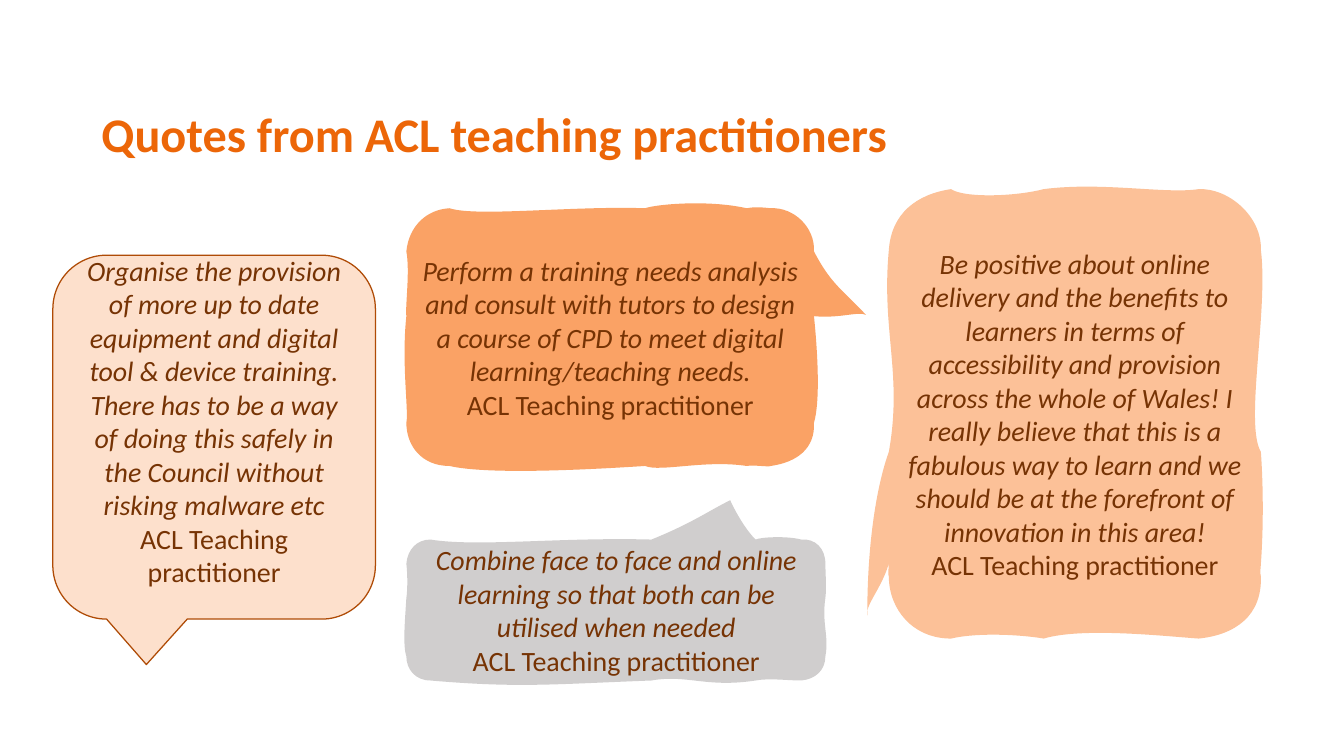
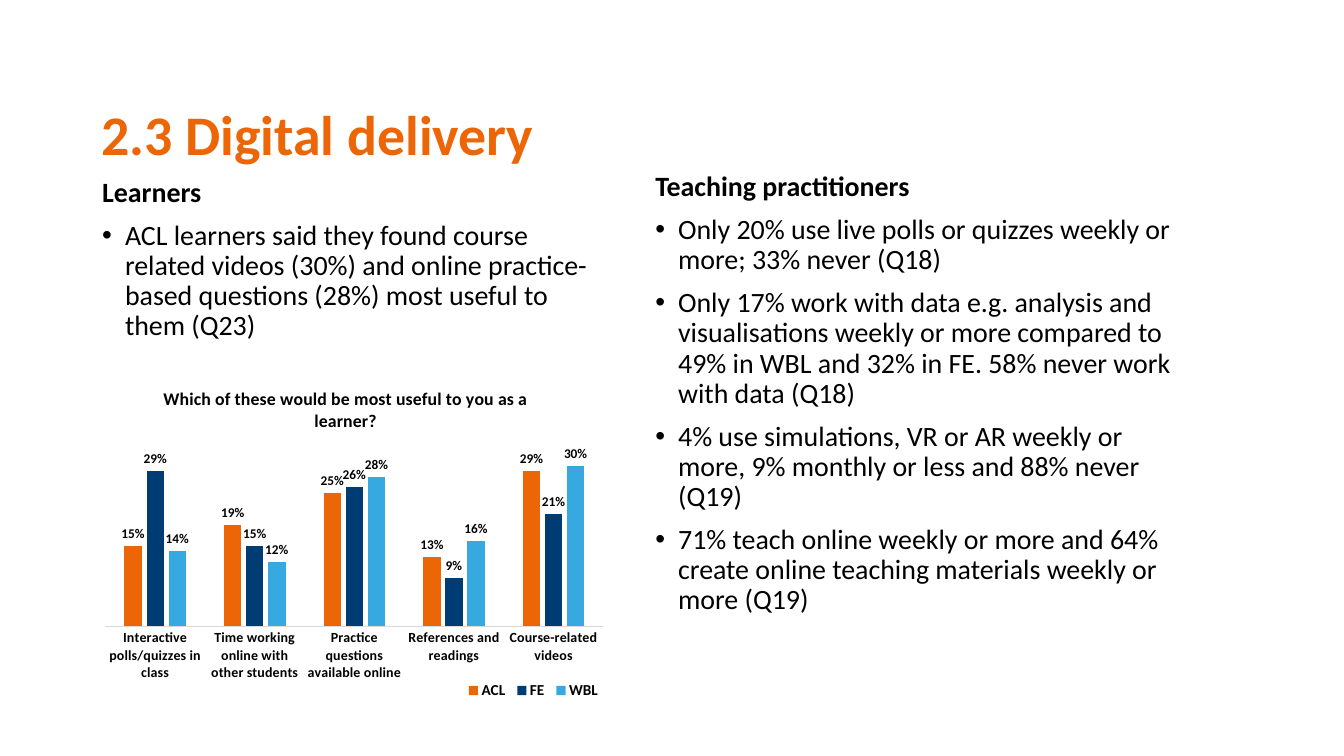
from dataclasses import dataclass

from lxml.etree import SubElement
from pptx import Presentation
from pptx.chart.data import CategoryChartData
from pptx.dml.color import RGBColor
from pptx.enum.chart import XL_CHART_TYPE as ChartType
from pptx.enum.chart import XL_LABEL_POSITION as LabelPosition
from pptx.enum.chart import XL_LEGEND_POSITION as LegendPosition
from pptx.enum.chart import XL_TICK_MARK as TickMark
from pptx.enum.shapes import MSO_SHAPE as Shape
from pptx.enum.text import MSO_ANCHOR as Anchor
from pptx.enum.text import MSO_AUTO_SIZE as AutoSize
from pptx.enum.text import PP_ALIGN as Align
from pptx.oxml.ns import qn
from pptx.util import Pt

TITLE_ONLY = 5


@dataclass(frozen=True)
class Theme:
    font: str = "Calibri"
    orange: str = "EC6608"
    navy: str = "003C74"
    sky: str = "36A9E1"
    text: str = "000000"
    quote: str = "763304"
    quote_line: str = "AF4B06"
    cream: str = "FDE0CC"
    apricot: str = "FAA265"
    peach: str = "FCC198"
    grey: str = "D0CECE"
    axis: str = "D9D9D9"
    title_size: float = 44
    long_title_size: float = 38
    body_size: float = 22
    chart_title_size: float = 14
    legend_size: float = 12
    category_size: float = 11
    value_size: float = 10.5


THEME = Theme()


def rgb(color):
    return RGBColor.from_string(color)


def style_font(font, size, color=THEME.text, bold=False, italic=False):
    font.name, font.size = THEME.font, Pt(size)
    font.bold, font.italic = bold, italic
    font.color.rgb = rgb(color)


def write(frame, text, align=Align.LEFT, spacing=1.0, before=0, bullet=False, **font):
    """Fill the empty first paragraph of a frame, or append another one."""
    paragraph = frame.paragraphs[0]
    if paragraph.runs:
        paragraph = frame.add_paragraph()
        paragraph.space_before = Pt(before)
    else:
        paragraph.space_before = Pt(0)
    paragraph.alignment, paragraph.line_spacing = align, spacing
    if bullet:
        properties = paragraph._p.get_or_add_pPr()
        properties.set("marL", str(Pt(18)))
        properties.set("indent", str(Pt(-18)))
        SubElement(properties, qn("a:buFont"), typeface="Arial")
        SubElement(properties, qn("a:buChar"), char="•")
    run = paragraph.add_run()
    run.text = text
    style_font(run.font, **font)


def bend(freeform, start, curves):
    """Replace the straight segments of a freeform by cubic curves."""
    outline = freeform.element.find(".//" + qn("a:path"))
    for segment in list(outline):
        outline.remove(segment)
    outline.set("w", str(freeform.width))
    outline.set("h", str(freeform.height))
    for tag, values in [("a:moveTo", start)] + [("a:cubicBezTo", c) for c in curves]:
        segment = SubElement(outline, qn(tag))
        for x, y in zip(values[::2], values[1::2]):
            SubElement(segment, qn("a:pt"),
                       x=str(Pt(x) - freeform.left), y=str(Pt(y) - freeform.top))
    SubElement(outline, qn("a:close"))


def set_layout(parent, index, inner=False, **percents):
    """Give a chart part a fixed place, in percent of the chart."""
    for old in parent.findall(qn("c:layout")):
        parent.remove(old)
    layout = SubElement(parent, qn("c:layout"))
    parent.insert(index, layout)
    manual = SubElement(layout, qn("c:manualLayout"))
    if inner:
        SubElement(manual, qn("c:layoutTarget"), val="inner")
    for axis in "xy":
        SubElement(manual, qn(f"c:{axis}Mode"), val="edge")
    for name, value in percents.items():
        SubElement(manual, qn(f"c:{name}"), val=f"{value / 100:.3f}")


class Deck:
    def __init__(self):
        self.presentation = Presentation()
        self.presentation.slide_width = Pt(1058.4)
        self.presentation.slide_height = Pt(595.44)
        self.slide = None

    def add_slide(self, title, width, size=THEME.title_size):
        layout = self.presentation.slide_layouts[TITLE_ONLY]
        self.slide = self.presentation.slides.add_slide(layout)
        heading = self.slide.shapes.title
        heading.left, heading.top = Pt(72.7), Pt(80)
        heading.width, heading.height = Pt(width), Pt(56)
        frame = heading.text_frame
        frame.auto_size, frame.vertical_anchor = AutoSize.NONE, Anchor.MIDDLE
        write(frame, title, spacing=0.9, size=size, color=THEME.orange, bold=True)

    def quote(self, bubble, words, fill):
        bubble.shadow.inherit = False
        bubble.fill.solid()
        bubble.fill.fore_color.rgb = rgb(fill)
        bubble.line.fill.background()
        frame = bubble.text_frame
        frame.word_wrap, frame.vertical_anchor = True, Anchor.MIDDLE
        for text, italic in ((words, True), ("ACL Teaching practitioner", False)):
            write(frame, text, align=Align.CENTER, size=THEME.body_size,
                  color=THEME.quote, italic=italic)

    def round_quote(self, words, left, top, width, height, fill, tail):
        bubble = self.slide.shapes.add_shape(
            Shape.ROUNDED_RECTANGULAR_CALLOUT, Pt(left), Pt(top), Pt(width), Pt(height))
        bubble.adjustments[0], bubble.adjustments[1] = tail
        self.quote(bubble, words, fill)
        bubble.line.color.rgb, bubble.line.width = rgb(THEME.quote_line), Pt(1)
        bubble.text_frame.margin_bottom = Pt(29)

    def sketched_quote(self, words, body, fill, start, curves):
        """Draw a hand-drawn bubble whose tail reaches out of its body."""
        builder = self.slide.shapes.build_freeform(Pt(start[0]), Pt(start[1]))
        builder.add_line_segments([(Pt(x), Pt(y)) for *_, x, y in curves])
        bubble = builder.convert_to_shape()
        bubble.left, bubble.top, bubble.width, bubble.height = map(Pt, body)
        bend(bubble, start, curves)
        self.quote(bubble, words, fill)

    def findings(self, heading, items, left, top, width, height):
        frame = self.slide.shapes.add_textbox(
            Pt(left), Pt(top), Pt(width), Pt(height)).text_frame
        frame.word_wrap = True
        write(frame, heading, spacing=0.9, size=THEME.body_size, bold=True)
        for item in items:
            write(frame, item, spacing=0.9, before=10, bullet=True, size=THEME.body_size)

    def column_chart(self, question, categories, series, left, top, width, height):
        data = CategoryChartData(number_format="0%")
        data.categories = categories
        for name, values, _ in series:
            data.add_series(name, values)
        chart = self.slide.shapes.add_chart(
            ChartType.COLUMN_CLUSTERED, Pt(left), Pt(top), Pt(width), Pt(height), data).chart
        style_font(chart.font, THEME.value_size)

        chart.has_title = True
        write(chart.chart_title.text_frame, question, align=Align.CENTER,
              size=THEME.chart_title_size, bold=True)
        chart.has_legend = True
        chart.legend.position = LegendPosition.BOTTOM
        chart.legend.include_in_layout = False
        style_font(chart.legend.font, THEME.legend_size, bold=True)

        categories_axis, values_axis = chart.category_axis, chart.value_axis
        categories_axis.major_tick_mark = TickMark.NONE
        categories_axis.format.line.color.rgb = rgb(THEME.axis)
        categories_axis.format.line.width = Pt(0.75)
        style_font(categories_axis.tick_labels.font, THEME.category_size, bold=True)
        values_axis.visible = values_axis.has_major_gridlines = False
        values_axis.minimum_scale, values_axis.maximum_scale = 0, 0.35

        plot = chart.plots[0]
        plot.gap_width, plot.overlap, plot.vary_by_categories = 219, -27, False
        for columns, (_, _, color) in zip(plot.series, series):
            columns.format.fill.solid()
            columns.format.fill.fore_color.rgb = rgb(color)
            labels = columns.data_labels
            labels.show_value, labels.position = True, LabelPosition.OUTSIDE_END
            labels.number_format, labels.number_format_is_linked = "0%", False
            style_font(labels.font, THEME.value_size, bold=True)

        parts = chart.element.find(qn("c:chart"))
        set_layout(parts.find(qn("c:title")), 1, x=13, y=5.1)
        set_layout(parts.find(qn("c:plotArea")), 0, inner=True,
                   x=2.5, y=21.7, w=95.4, h=55.1)
        set_layout(parts.find(qn("c:legend")), 1, x=70.8, y=92.3, w=27.4, h=7)


def add_quotes(deck):
    deck.add_slide("Quotes from ACL teaching practitioners", 931.7, THEME.long_title_size)
    deck.round_quote(
        "Organise the provision of more up to date equipment and digital tool & device "
        "training. There has to be a way of doing this safely in the Council without "
        "risking malware etc",
        41.6, 201, 254, 286.6, THEME.cream, tail=(-0.21, 0.625))
    deck.sketched_quote(
        "Perform a training needs analysis and consult with tutors to design a course of "
        "CPD to meet digital learning/teaching needs.",
        (320.4, 164, 320.4, 203), THEME.apricot, (320, 198), [
            (322, 178, 336, 165, 354, 164), (375, 171, 451, 162, 508, 164),
            (516, 161, 557, 157, 588, 164), (593, 163, 598, 163, 607, 164),
            (625, 163, 642, 179, 641, 198), (654, 223, 662, 227, 682, 248),
            (676, 245, 661, 251, 641, 249), (644, 278, 646, 316, 641, 333),
            (642, 353, 628, 364, 607, 367), (605, 368, 594, 366, 588, 367),
            (555, 362, 520, 372, 508, 367), (462, 370, 384, 374, 354, 367),
            (332, 367, 320, 351, 320, 333), (322, 324, 316, 286, 320, 249),
            (319, 241, 323, 214, 320, 198)])
    deck.sketched_quote(
        "Combine face to face and online learning so that both can be utilised when needed",
        (320.4, 425, 329.8, 111), THEME.grey, (320, 444), [
            (321, 433, 328, 425, 339, 425), (376, 431, 441, 423, 513, 425),
            (545, 412, 557, 403, 575, 394), (580, 405, 588, 418, 595, 425),
            (599, 423, 620, 422, 631, 425), (642, 424, 650, 432, 650, 444),
            (650, 451, 651, 463, 650, 471), (647, 491, 653, 501, 650, 517),
            (650, 528, 642, 535, 631, 536), (620, 536, 606, 534, 595, 536),
            (556, 542, 541, 531, 513, 536), (435, 539, 408, 542, 339, 536),
            (327, 536, 320, 527, 320, 517), (317, 508, 319, 488, 320, 471),
            (321, 465, 321, 452, 320, 444)])
    deck.sketched_quote(
        "Be positive about online delivery and the benefits to learners in terms of "
        "accessibility and provision across the whole of Wales! I really believe that "
        "this is a fabulous way to learn and we should be at the forefront of innovation "
        "in this area!",
        (700, 149, 293, 354), THEME.peach, (700, 197), [
            (702, 168, 722, 153, 749, 149), (759, 156, 799, 155, 822, 149),
            (868, 143, 918, 153, 944, 149), (968, 148, 994, 171, 993, 197),
            (999, 245, 980, 334, 993, 356), (995, 384, 995, 417, 993, 444),
            (993, 447, 992, 451, 993, 454), (994, 485, 973, 500, 944, 503),
            (916, 501, 852, 494, 822, 503), (805, 500, 770, 498, 749, 503),
            (719, 503, 700, 480, 700, 454), (699, 453, 700, 447, 700, 444),
            (694, 464, 681, 477, 683, 485), (683, 421, 692, 378, 700, 356),
            (711, 294, 694, 261, 700, 197)])


def add_digital_delivery(deck):
    deck.add_slide("2.3 Digital delivery", 821.5)
    deck.findings(
        "Learners",
        ["ACL learners said they found course related videos (30%) and online "
         "practice-based questions (28%) most useful to them (Q23)"],
        73.4, 136.8, 410.4, 390.2)
    deck.findings(
        "Teaching practitioners",
        ["Only 20% use live polls or quizzes weekly or more; 33% never (Q18)",
         "Only 17% work with data e.g. analysis and visualisations weekly or more compared "
         "to 49% in WBL and 32% in FE. 58% never work with data (Q18)",
         "4% use simulations, VR or AR weekly or more, 9% monthly or less and 88% never (Q19)",
         "71% teach online weekly or more and 64% create online teaching materials weekly "
         "or more (Q19)"],
        509, 132.5, 427.7, 402.5)
    deck.column_chart(
        "Which of these would be most useful to you as a learner?",
        ["Interactive polls/quizzes in class", "Time working online with other students",
         "Practice questions available online", "References and readings",
         "Course-related videos"],
        [("ACL", (0.15, 0.19, 0.25, 0.13, 0.29), THEME.orange),
         ("FE", (0.29, 0.15, 0.26, 0.09, 0.21), THEME.navy),
         ("WBL", (0.14, 0.12, 0.28, 0.16, 0.3), THEME.sky)],
        72.7, 288, 411.1, 267.1)


def main():
    deck = Deck()
    add_quotes(deck)
    add_digital_delivery(deck)
    deck.presentation.save("out.pptx")


if __name__ == "__main__":
    main()
